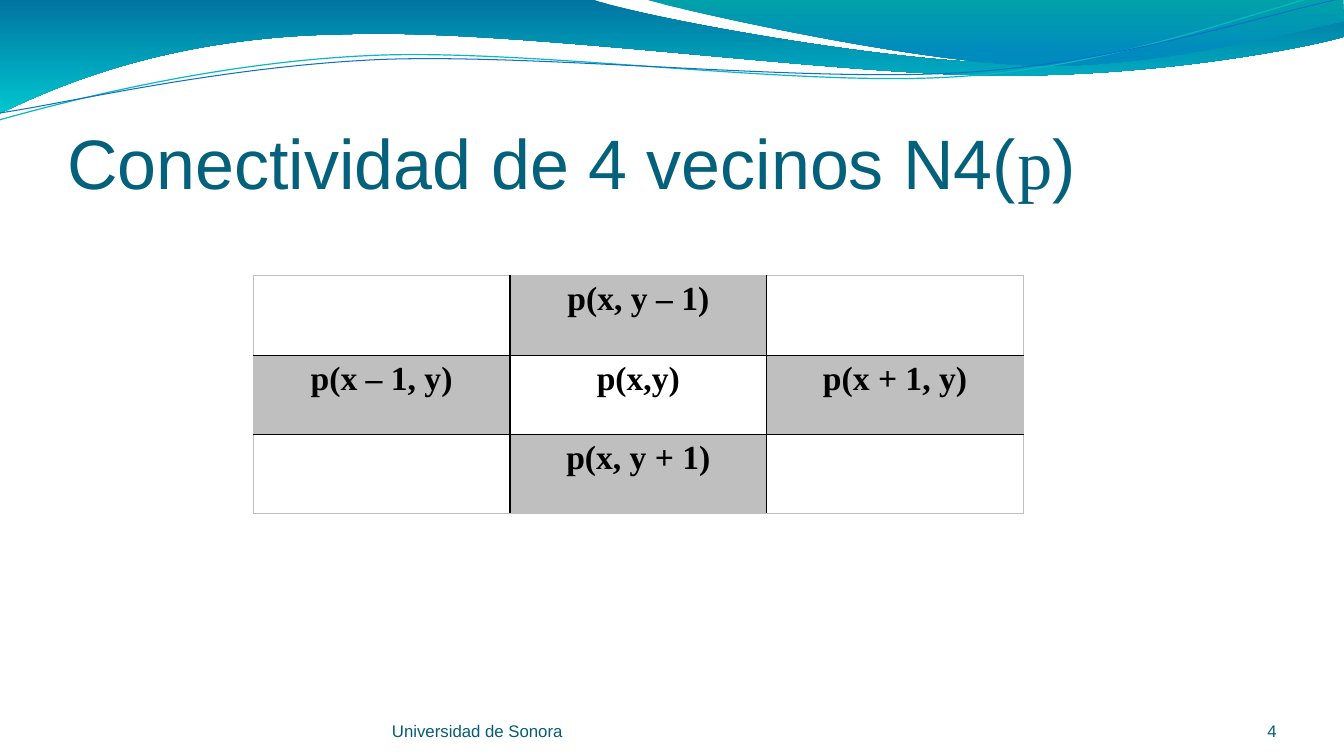
"""Builds a slide on the four-neighbour connectivity of a pixel."""
import lxml.etree
import pptx
import pptx.dml.color
import pptx.enum.text
import pptx.oxml.ns
import pptx.util

Pt = pptx.util.Pt
RGB = pptx.dml.color.RGBColor
ALIGN = pptx.enum.text.PP_ALIGN
ANCHOR = pptx.enum.text.MSO_ANCHOR
qn = pptx.oxml.ns.qn

BLACK = RGB(0x00, 0x00, 0x00)
GREY = RGB(0xBF, 0xBF, 0xBF)
TITLE = RGB(0x04, 0x61, 0x7B)
NOTE = RGB(0x04, 0x5D, 0x75)
OCEAN = RGB(0x00, 0x74, 0xA1)
CYAN = RGB(0x00, 0xC6, 0xCF)
TEAL = RGB(0x00, 0xA1, 0xA9)
SKY = RGB(0x00, 0x8B, 0xBF)
AQUA = RGB(0x0A, 0xB8, 0xBF)
BLUE = RGB(0x0F, 0x6F, 0xC6)
SANS = "Arial"
SERIF = "Times New Roman"
TILT = 357.3

BANDS = [
    ([(0, 0), (422.6, -0.7), (456.5, 12.2, 637.2, 45.4, 727.9, 45.4),
      (819.4, 45.4, 920.2, 18.7, 959.8, 6.5), (961.2, 25.9),
      (943.9, 31.7, 835.2, 54.7, 715.7, 54),
      (596.9, 54, 366.5, 20.2, 247, 24.5),
      (123.8, 25.9, 43.9, 59.8, -0.7, 81.4)],
     [(0, OCEAN, 45), (1, CYAN, 55)]),
    ([(460.1, -0.7), (488.9, 7.9, 654.5, 44.6, 738, 46.8),
      (821.5, 49.7, 923, 23, 959.8, 15.1), (959.8, 0)],
     [(0, TEAL, 30), (0.8, SKY, 45)]),
]
LINES = [
    ([(-2.3, 63.1), (45.1, 52.3, 152.1, 29.2, 266, 29.6),
      (379.8, 29.9, 567.7, 66.8, 683.2, 64.4),
      (798.5, 62.6, 902.6, 25.7, 960.1, 15.5)], AQUA, 0.85),
    ([(-1.3, 58), (44.4, 53.7, 157.2, 32.3, 272.4, 32.7),
      (386.9, 33.8, 572.2, 63.4, 687, 61.6),
      (802.3, 59.8, 904.6, 30, 962.1, 21.2)], BLUE, 0.75),
]
GRID = [["", "p(x, y – 1)", ""],
        ["p(x – 1, y)", "p(x,y)", "p(x + 1, y)"],
        ["", "p(x, y + 1)", ""]]


class Deck:
    """Holds the style and the current slide."""

    def __init__(self, wide, high):
        self.show = pptx.Presentation()
        self.show.slide_width, self.show.slide_height = Pt(wide), Pt(high)
        self.slide = self.show.slides.add_slide(self.show.slide_layouts[5])
        self.shapes = self.slide.shapes

    def curve(self, steps, close):
        """Draw an outline of straight and cubic steps."""
        dots = [(Pt(x), Pt(y)) for step in steps
                for x, y in zip(step[::2], step[1::2])]
        pen = self.shapes.build_freeform(*dots[0])
        pen.add_line_segments(dots[1:], close=close)
        shape = pen.convert_to_shape()
        shape.shadow.inherit = False
        legs = iter(list(shape.element.iter(qn("a:lnTo"))))
        for step in steps[1:]:
            leg = next(legs)
            if len(step) == 6:
                bend = lxml.etree.Element(qn("a:cubicBezTo"))
                leg.addprevious(bend)
                for part in (leg, next(legs), next(legs)):
                    bend.append(part[0])
                    part.getparent().remove(part)
        return shape

    def band(self, steps, stops):
        """Draw a wave with a see-through vertical gradient."""
        shape = self.curve(steps, True)
        shape.line.fill.background()
        shape.fill.gradient()
        shape.fill.gradient_angle = 270
        tints = shape.element.spPr.iter(qn("a:srgbClr"))
        for stop, (place, color, _) in zip(shape.fill.gradient_stops, stops):
            stop.position = place
            stop.color.rgb = color
        for tint, (_, _, alpha) in zip(tints, stops):
            lxml.etree.SubElement(tint, qn("a:alpha"), val=str(alpha * 1000))

    def line(self, steps, color, width):
        """Draw a tilted open wave line."""
        shape = self.curve(steps, False)
        shape.rotation = TILT
        shape.fill.background()
        shape.line.color.rgb = color
        shape.line.width = Pt(width)

    def run(self, para, text, size, face, color, bold=False):
        """Add one styled run."""
        run = para.add_run()
        run.text = text
        font = run.font
        font.size, font.name, font.bold = Pt(size), face, bold
        font.color.rgb = color

    def frame(self, shape, box, top=0, align=ALIGN.LEFT):
        """Place a text shape and return its first paragraph."""
        shape.left, shape.top, shape.width, shape.height = map(Pt, box)
        text = shape.text_frame
        text.word_wrap = True
        text.auto_size = pptx.enum.text.MSO_AUTO_SIZE.NONE
        text.vertical_anchor = ANCHOR.BOTTOM
        text.margin_left = text.margin_right = text.margin_bottom = 0
        text.margin_top = Pt(top)
        para = text.paragraphs[0]
        para.alignment = align
        return para

    def title(self, box, parts):
        """Fill the title placeholder."""
        para = self.frame(self.shapes.title, box, top=3.6)
        for text, face in parts:
            self.run(para, text, 50, face, TITLE)

    def note(self, box, text, align=ALIGN.LEFT):
        """Add a footer text."""
        shape = self.shapes.add_textbox(*map(Pt, box))
        para = self.frame(shape, box, align=align)
        self.run(para, text, 12, SANS, NOTE)

    def edge(self, cell, side, color):
        """Draw one border of a cell."""
        line = lxml.etree.SubElement(cell._tc.get_or_add_tcPr(), qn("a:ln" + side),
                                     w=str(Pt(1)))
        fill = lxml.etree.SubElement(line, qn("a:solidFill"))
        lxml.etree.SubElement(fill, qn("a:srgbClr"), val=str(color))

    def table(self, box, rows):
        """Add the grid of pixels, with the neighbours shaded."""
        last = len(rows) - 1
        table = self.shapes.add_table(len(rows), len(rows[0]), *map(Pt, box)).table
        table.first_row = table.horz_banding = False
        for r, row in enumerate(rows):
            for c, text in enumerate(row):
                cell = table.cell(r, c)
                outer = {"L": c == 0, "R": c == last, "T": r == 0, "B": r == last}
                for side, rim in outer.items():
                    self.edge(cell, side, GREY if rim else BLACK)
                if (r + c) % 2:
                    cell.fill.solid()
                    cell.fill.fore_color.rgb = GREY
                else:
                    cell.fill.background()
                if text:
                    para = cell.text_frame.paragraphs[0]
                    para.alignment = ALIGN.CENTER
                    self.run(para, text, 24, SERIF, BLACK, True)


def main():
    """Build and save the slide."""
    deck = Deck(960, 540)
    for steps, stops in BANDS:
        deck.band(steps, stops)
    for steps, color, width in LINES:
        deck.line(steps, color, width)
    deck.title((48, 55.5, 864, 90),
               [("Conectividad de 4 vecinos N4(", SANS), ("p", SERIF), (")", SANS)])
    deck.note((280, 500.5, 352, 28.8), "Universidad de Sonora")
    deck.note((832, 500.5, 80, 28.8), "4", ALIGN.RIGHT)
    deck.table((180.9, 197, 550.2, 170), GRID)
    deck.show.save("out.pptx")


if __name__ == "__main__":
    main()
